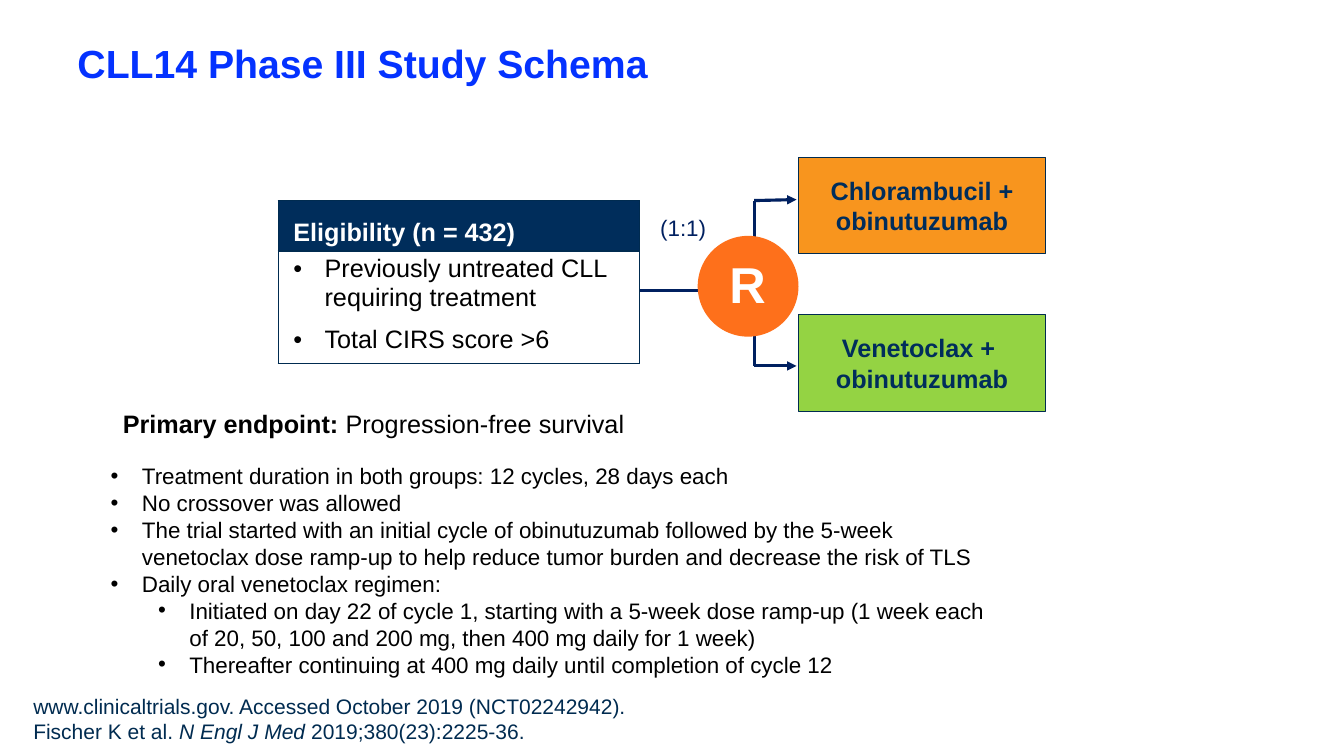
from pptx import Presentation
from pptx.dml.color import RGBColor
from pptx.enum.shapes import MSO_CONNECTOR as Link, MSO_SHAPE as Kind
from pptx.enum.text import MSO_ANCHOR as Anchor, MSO_AUTO_SIZE as Auto, PP_ALIGN as Align
from pptx.oxml import parse_xml
from pptx.oxml.ns import nsdecls
from pptx.util import Inches, Pt

NAVY, BLUE, EDGE = "002D5B", "002060", "002B50"
BLACK, WHITE = "000000", "FFFFFF"
INSET = (0.1, 0.05, 0.1, 0.05)
CELL = (0.15, 0.04, 0.08, 0.04)
SIDES = ("left", "top", "right", "bottom")
HANG = 0.31


def rgb(value):
    return RGBColor.from_string(value)


class Board:
    """Holds the text style and the slide being drawn on."""

    def __init__(self, slide, font):
        self.slide = slide
        self.font = font

    def fill_text(self, frame, lines, size, color, bold=False, align=None, gap=0, dents=()):
        """Each line is a string or a list of (text, format) runs; dents are bullet indents."""
        for i, line in enumerate(lines):
            para = frame.paragraphs[0] if i == 0 else frame.add_paragraph()
            if align is not None:
                para.alignment = align
            para.space_before = Pt(gap if i else 0)
            if dents:
                self.bullet(para, dents[i])
            for text, extra in [(line, {})] if isinstance(line, str) else line:
                if text == "\n":
                    para.add_line_break()
                    continue
                run = para.add_run()
                run.text = text
                look = {"name": self.font, "size": Pt(size), "bold": bold, **extra}
                for key, value in look.items():
                    setattr(run.font, key, value)
                run.font.color.rgb = rgb(color)

    def bullet(self, para, dent):
        props = para._p.get_or_add_pPr()
        props.set("marL", str(Inches(dent)))
        props.set("indent", str(-Inches(HANG)))
        if dent > HANG:
            props.set("lvl", "1")
        for tag in (f'buFont {nsdecls("a")} typeface="{self.font}"',
                    f'buChar {nsdecls("a")} char="•"'):
            props.append(parse_xml(f"<a:{tag}/>"))

    def inset(self, item, pads):
        for side, pad in zip(SIDES, pads):
            setattr(item, f"margin_{side}", Inches(pad))

    def text(self, at, lines, size, color, anchor=Anchor.TOP, pads=INSET,
             wrap=True, grow=False, **style):
        frame = self.slide.shapes.add_textbox(*map(Inches, at)).text_frame
        frame.word_wrap = wrap
        frame.auto_size = Auto.SHAPE_TO_FIT_TEXT if grow else Auto.NONE
        frame.vertical_anchor = anchor
        self.inset(frame, pads)
        self.fill_text(frame, lines, size, color, **style)

    def shape(self, kind, at, fill, edge=None, lines=()):
        shape = self.slide.shapes.add_shape(kind, *map(Inches, at))
        shape.shadow.inherit = False
        shape.fill.solid()
        shape.fill.fore_color.rgb = rgb(fill)
        if edge:
            shape.line.color.rgb = rgb(edge)
            shape.line.width = Pt(0.75)
        else:
            shape.line.fill.background()
        frame = shape.text_frame
        frame.word_wrap = True
        frame.vertical_anchor = Anchor.MIDDLE
        self.fill_text(frame, lines, 18, NAVY, bold=True, align=Align.CENTER)

    def line(self, start, end, arrow=False):
        line = self.slide.shapes.add_connector(
            Link.STRAIGHT, *map(Inches, (*start, *end)))
        line.line.color.rgb = rgb(BLUE)
        line.line.width = Pt(2.25)
        if arrow:
            line.line._get_or_add_ln().append(
                parse_xml(f'<a:tailEnd {nsdecls("a")} type="triangle"/>'))
        line._element.spPr.append(parse_xml(f'<a:effectLst {nsdecls("a")}/>'))

    def table(self, at, rows):
        """Each row is (height, fill, anchor, text style)."""
        table = self.slide.shapes.add_table(len(rows), 1, *map(Inches, at)).table
        table.first_row = table.horz_banding = False
        for i, (height, fill, anchor, style) in enumerate(rows):
            table.rows[i].height = Inches(height)
            cell = table.cell(i, 0)
            self.inset(cell, CELL)
            cell.vertical_anchor = anchor
            for side in "LRTB":
                cell._tc.get_or_add_tcPr().append(parse_xml(
                    f'<a:ln{side} {nsdecls("a")} w="{Pt(1)}"><a:solidFill>'
                    f'<a:srgbClr val="{EDGE}"/></a:solidFill></a:ln{side}>'))
            cell.fill.solid()
            cell.fill.fore_color.rgb = rgb(fill)
            self.fill_text(cell.text_frame, size=18, **style)


def main():
    deck = Presentation()
    deck.slide_width, deck.slide_height = Inches(13.33), Inches(7.5)
    board = Board(deck.slides.add_slide(deck.slide_layouts[6]), "Arial")

    board.text((0.67, 0, 12.58, 1.25), ["CLL14 Phase III Study Schema"], 28, "0432FF",
               anchor=Anchor.MIDDLE, bold=True)
    board.text((0.18, 6.83, 7.25, 0.62), [[
        ("www.clinicaltrials.gov. Accessed October 2019 (NCT02242942).", {}),
        ("\n", {}),
        ("Fischer K et al. ", {}),
        ("N Engl J Med ", {"italic": True}),
        ("2019;380(23):2225-36.", {}),
    ]], 15, EDGE, anchor=Anchor.BOTTOM, pads=(0.15, 0.05, 0.1, 0.07))
    board.text((1.12, 4, 5.22, 0.4), [[
        ("Primary endpoint: ", {"bold": True}),
        ("Progression-free survival", {}),
    ]], 18, BLACK, wrap=False, grow=True)
    board.text((1, 4.54, 8.97, 2.26), [
        "Treatment duration in both groups: 12 cycles, 28 days each",
        "No crossover was allowed",
        "The trial started with an initial cycle of obinutuzumab followed by the 5-week "
        "venetoclax dose ramp-up to help reduce tumor burden and decrease the risk of TLS",
        "Daily oral venetoclax regimen:",
        "Initiated on day 22 of cycle 1, starting with a 5-week dose ramp-up (1 week each "
        "of 20, 50, 100 and 200 mg, then 400 mg daily for 1 week)",
        "Thereafter continuing at 400 mg daily until completion of cycle 12",
    ], 16, BLACK, grow=True, dents=[HANG] * 4 + [0.78] * 2)

    fork, high, low = 7.48, 1.99, 3.63
    board.line((6.31, 2.88), (fork, 2.88))
    board.line((fork, high), (fork, low))
    board.line((fork, high), (7.9, 1.98), arrow=True)
    board.line((fork, low), (7.9, low), arrow=True)

    arms = [(1.56, "F8951E", "Chlorambucil +"), (3.12, "94D343", "Venetoclax + ")]
    for top, fill, drug in arms:
        board.shape(Kind.RECTANGLE, (7.92, top, 2.45, 0.96), fill, EDGE,
                    [drug, "obinutuzumab"])

    board.table((2.76, 1.99, 3.58, 1.61), [
        (0.5, NAVY, Anchor.BOTTOM,
         {"lines": ["Eligibility (n = 432)"], "color": WHITE, "bold": True}),
        (1.11, WHITE, Anchor.TOP,
         {"lines": ["Previously untreated CLL requiring treatment",
                    "Total CIRS score >6"],
          "color": BLACK, "gap": 10, "dents": [HANG] * 2}),
    ])

    board.text((6.45, 2.08, 0.66, 0.37), ["(1:1)"], 16, BLUE, wrap=False, grow=True)
    board.shape(Kind.OVAL, (6.92, 2.34, 1, 1), "FE701B")
    board.text((7, 2.42, 0.83, 0.83), ["R"], 36, WHITE, anchor=Anchor.MIDDLE,
               pads=(0, 0, 0, 0.05), bold=True, align=Align.CENTER)

    deck.save("out.pptx")


if __name__ == "__main__":
    main()
